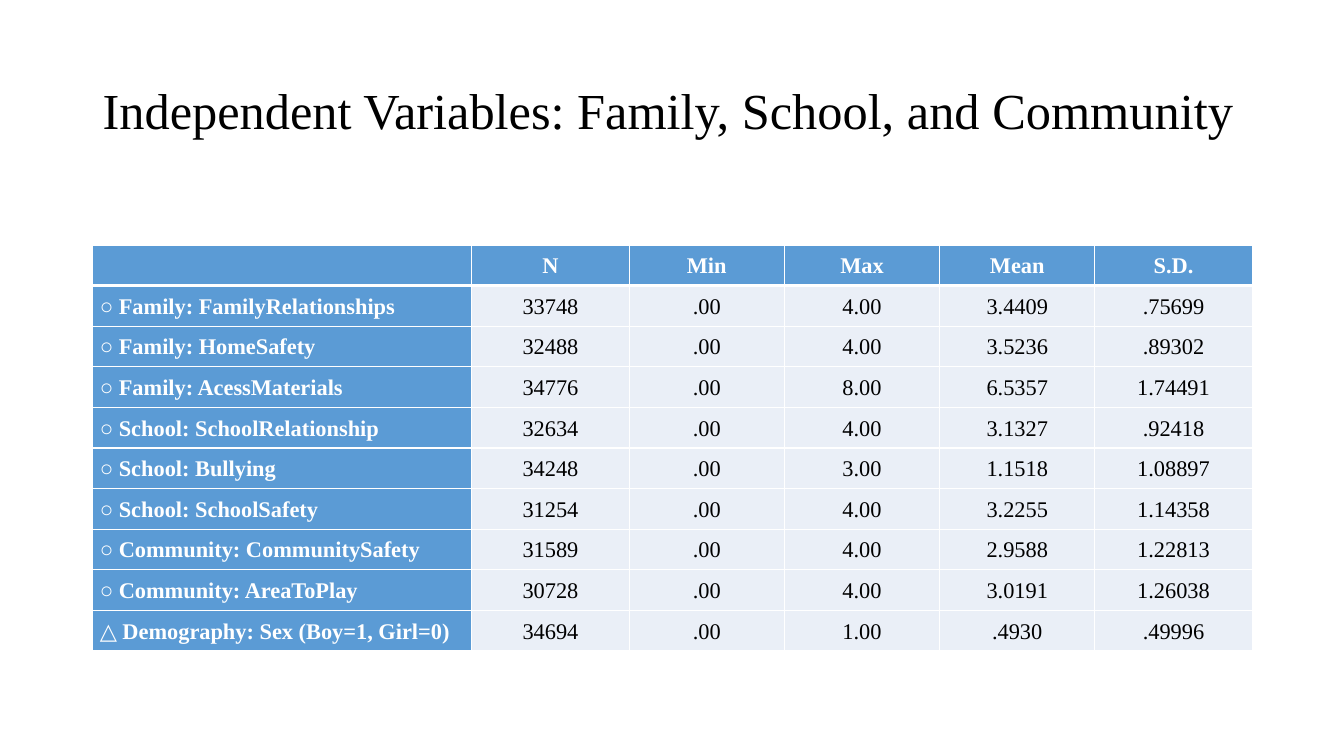
from lxml import etree
from pptx import Presentation
from pptx.dml.color import RGBColor
from pptx.enum import text
from pptx.oxml import ns
from pptx.util import Inches, Pt

TITLE = "Independent Variables: Family, School, and Community"
HEADER = ("", "N", "Min", "Max", "Mean", "S.D.")
VARIABLES = [
    ("○ Family: FamilyRelationships", "33748", ".00", "4.00", "3.4409", ".75699"),
    ("○ Family: HomeSafety", "32488", ".00", "4.00", "3.5236", ".89302"),
    ("○ Family: AcessMaterials", "34776", ".00", "8.00", "6.5357", "1.74491"),
    ("○ School: SchoolRelationship", "32634", ".00", "4.00", "3.1327", ".92418"),
    ("○ School: Bullying", "34248", ".00", "3.00", "1.1518", "1.08897"),
    ("○ School: SchoolSafety", "31254", ".00", "4.00", "3.2255", "1.14358"),
    ("○ Community: CommunitySafety", "31589", ".00", "4.00", "2.9588", "1.22813"),
    ("○ Community: AreaToPlay", "30728", ".00", "4.00", "3.0191", "1.26038"),
    ("△ Demography: Sex (Boy=1, Girl=0)", "34694", ".00", "1.00", ".4930", ".49996"),
]
COLORS = {"heading": "5B9BD5", "body": "EAEFF7", "white": "FFFFFF", "black": "000000"}
FONT = "Times New Roman"
LEFT, WIDTH = 0.92, 11.5
TABLE_TOP, TABLE_HEIGHT = 2.43, 4.03
COLUMN_WIDTHS = (3.76, 1.56, 1.54, 1.54, 1.54, 1.56)


def color(name):
    return RGBColor.from_string(COLORS[name])


def set_font(paragraph, size, color_name, bold=False):
    font = paragraph.font
    font.name, font.size, font.bold = FONT, Pt(size), bold
    font.color.rgb = color(color_name)


def add_borders(cell, widths):
    """Draw white borders; widths maps L, R, T and B to points."""
    properties = cell._tc.get_or_add_tcPr()
    for side, width in widths.items():
        line = etree.SubElement(properties, ns.qn(f"a:ln{side}"), w=str(Pt(width)))
        fill = etree.SubElement(line, ns.qn("a:solidFill"))
        etree.SubElement(fill, ns.qn("a:srgbClr"), val=COLORS["white"])


def add_title(slide):
    box = slide.shapes.add_textbox(Inches(LEFT), Inches(0.4), Inches(WIDTH), Inches(1.45))
    frame = box.text_frame
    frame.word_wrap = True
    frame.vertical_anchor = text.MSO_ANCHOR.MIDDLE
    paragraph = frame.paragraphs[0]
    paragraph.text = TITLE
    paragraph.line_spacing = 0.9
    set_font(paragraph, 36, "black")


def fill_cell(cell, value, row, column):
    is_heading = row == 0 or column == 0
    add_borders(cell, {"L": 1, "R": 1, "T": 3 if row == 1 else 1, "B": 3 if row == 0 else 1})
    cell.fill.solid()
    cell.fill.fore_color.rgb = color("heading" if is_heading else "body")
    cell.margin_left = cell.margin_right = Inches(0.07)
    cell.margin_top = cell.margin_bottom = 0
    cell.vertical_anchor = text.MSO_ANCHOR.MIDDLE
    paragraph = cell.text_frame.paragraphs[0]
    paragraph.text = value
    paragraph.alignment = text.PP_ALIGN.CENTER if column else text.PP_ALIGN.JUSTIFY
    paragraph.line_spacing = 1.07
    paragraph.space_after = Pt(8)
    set_font(paragraph, 16, "white" if is_heading else "black", is_heading)


def add_statistics(slide):
    rows = [HEADER, *VARIABLES]
    table = slide.shapes.add_table(
        len(rows), len(HEADER), Inches(LEFT), Inches(TABLE_TOP),
        Inches(WIDTH), Inches(TABLE_HEIGHT)).table
    table.first_col = True
    table.horz_banding = False
    for column, width in zip(table.columns, COLUMN_WIDTHS):
        column.width = Inches(width)
    for row, values in enumerate(rows):
        for column, value in enumerate(values):
            fill_cell(table.cell(row, column), value, row, column)


def main():
    presentation = Presentation()
    presentation.slide_width = Inches(13.33)
    presentation.slide_height = Inches(7.5)
    slide = presentation.slides.add_slide(presentation.slide_layouts[6])
    add_title(slide)
    add_statistics(slide)
    presentation.save("out.pptx")


if __name__ == "__main__":
    main()
